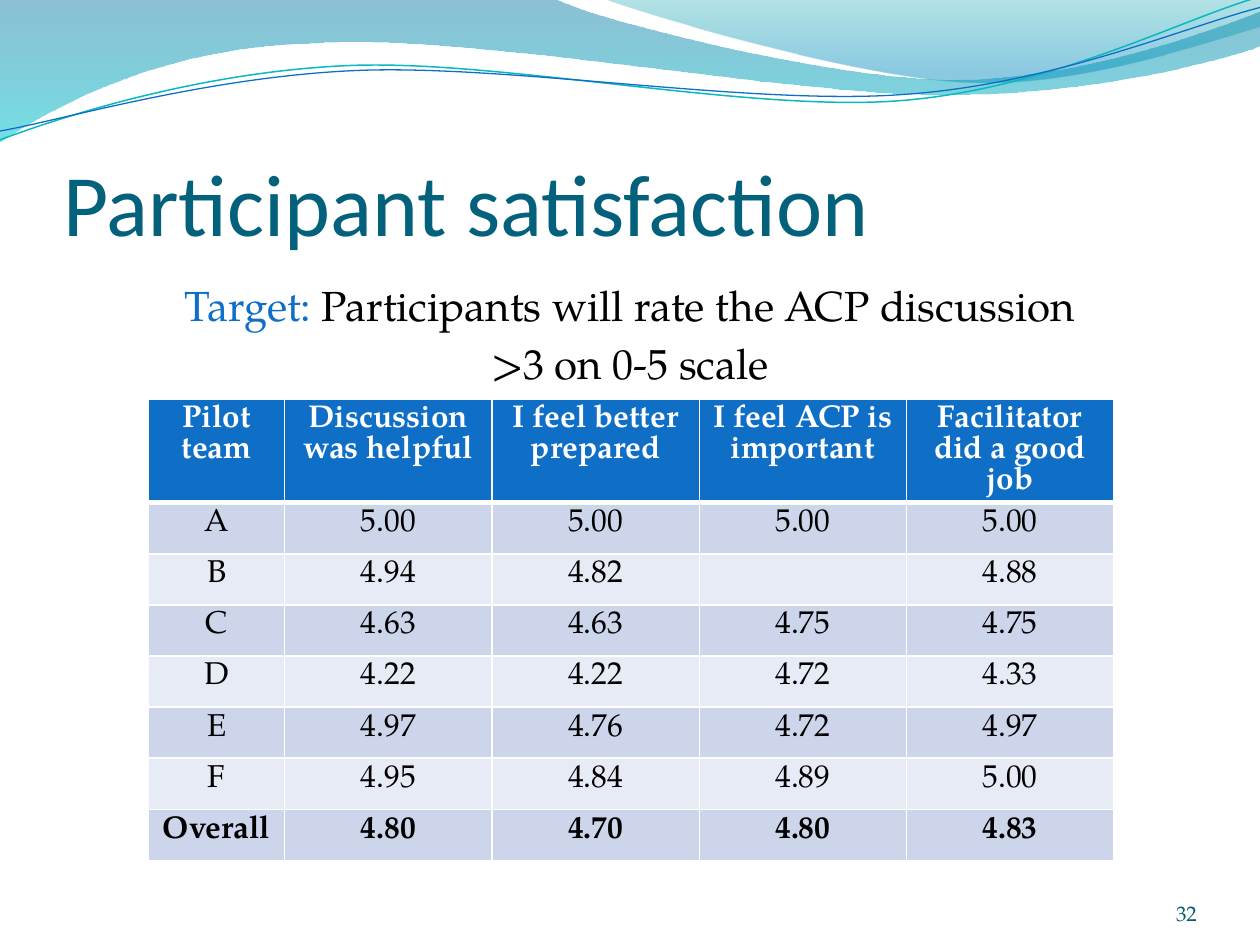
from dataclasses import dataclass
from math import cos, radians, sin
from typing import Optional

from lxml.etree import SubElement
from pptx import Presentation
from pptx.dml.color import RGBColor
from pptx.enum.text import MSO_ANCHOR as Anchor, PP_ALIGN as Align
from pptx.oxml.ns import qn
from pptx.util import Inches, Pt

SERIF, SANS = "TeX Gyre Pagella", "Calibri"
BLUE, TEAL, WHITE, BLACK = "0F6FC6", "04617B", "FFFFFF", "000000"
BANDS = ("CCD5EA", "E7EBF5")

TABLE_ROWS = [
    ["Pilot team", "Discussion was helpful", "I feel better prepared",
     "I feel ACP is important", "Facilitator did a good job"],
    ["A", "5.00", "5.00", "5.00", "5.00"],
    ["B", "4.94", "4.82", "", "4.88"],
    ["C", "4.63", "4.63", "4.75", "4.75"],
    ["D", "4.22", "4.22", "4.72", "4.33"],
    ["E", "4.97", "4.76", "4.72", "4.97"],
    ["F", "4.95", "4.84", "4.89", "5.00"],
    ["Overall", "4.80", "4.70", "4.80", "4.83"],
]


@dataclass
class GradientStop:
    position: float
    color: str
    opacity: int


@dataclass
class Wave:
    """Segments hold one point for a line and three for a Bézier curve."""
    start: tuple
    segments: list
    stops: Optional[list] = None
    line_color: str = ""
    line_width: float = 0
    center: tuple = (0, 0)
    rotation: float = 0


WAVES = [
    Wave((0, 0), [
        [(4.4, -0.01)],
        [(4.76, 0.17), (6.64, 0.63), (7.58, 0.63)],
        [(8.53, 0.63), (9.58, 0.26), (10, 0.09)],
        [(10.01, 0.36)],
        [(9.83, 0.44), (8.7, 0.76), (7.46, 0.75)],
        [(6.22, 0.75), (3.82, 0.28), (2.57, 0.34)],
        [(1.29, 0.36), (0.46, 0.83), (-0.01, 1.13)],
        [(0, 0)],
    ], stops=[GradientStop(0, "0074A1", 45), GradientStop(1, "00C6CF", 55)]),
    Wave((4.79, -0.01), [
        [(5.09, 0.11), (6.82, 0.62), (7.69, 0.65)],
        [(8.56, 0.69), (9.61, 0.32), (10, 0.21)],
        [(10, 0)],
        [(4.79, -0.01)],
    ], stops=[GradientStop(0, "00A1A9", 30), GradientStop(0.8, "008BBF", 45)]),
    Wave((0, 1.11), [
        [(0.48, 0.93), (1.58, 0.57), (2.77, 0.52)],
        [(3.95, 0.47), (5.93, 0.89), (7.13, 0.8)],
        [(8.33, 0.71), (9.38, 0.15), (9.98, -0.02)],
    ], line_color="0AB8BF", line_width=0.85, center=(4.99, 0.58), rotation=357.3),
    Wave((0, 1.04), [
        [(0.47, 0.96), (1.64, 0.61), (2.83, 0.56)],
        [(4.03, 0.51), (5.97, 0.84), (7.17, 0.75)],
        [(8.36, 0.67), (9.41, 0.21), (10, 0.06)],
    ], line_color=BLUE, line_width=0.75, center=(5, 0.59), rotation=357.3),
]


def rgb(color: str) -> RGBColor:
    return RGBColor.from_string(color)


def unrotated(wave: Wave, point: tuple) -> tuple:
    """Place a point so that the shape's rotation brings it to its final spot."""
    angle = radians(-wave.rotation)
    x, y = point[0] - wave.center[0], point[1] - wave.center[1]
    return (Inches(wave.center[0] + x * cos(angle) - y * sin(angle)),
            Inches(wave.center[1] + x * sin(angle) + y * cos(angle)))


def curve_segments(shape, segments: list) -> None:
    """Join each run of three straight steps into one Bézier curve."""
    steps = iter(list(shape.element.spPr.iter(qn("a:lnTo"))))
    for segment in segments:
        first, *others = [next(steps) for _ in segment]
        if others:
            first.tag = qn("a:cubicBezTo")
        for step in others:
            first.append(step[0])
            step.getparent().remove(step)


def draw_wave(slide, wave: Wave) -> None:
    points = [unrotated(wave, point) for segment in wave.segments for point in segment]
    builder = slide.shapes.build_freeform(*unrotated(wave, wave.start))
    builder.add_line_segments(points, close=bool(wave.stops))
    shape = builder.convert_to_shape()
    curve_segments(shape, wave.segments)
    shape.rotation = wave.rotation
    shape.shadow.inherit = False
    if not wave.stops:
        shape.fill.background()
        shape.line.color.rgb = rgb(wave.line_color)
        shape.line.width = Pt(wave.line_width)
        return
    shape.line.fill.background()
    shape.fill.gradient()
    shape.fill.gradient_angle = 270
    for target, stop in zip(shape.fill.gradient_stops, wave.stops):
        target.color.rgb = rgb(stop.color)
        target.position = stop.position
    # Opacity of each gradient stop
    colors = list(shape.element.spPr.iter(qn("a:srgbClr")))
    for color, stop in zip(colors, wave.stops):
        SubElement(color, qn("a:alpha"), val=str(stop.opacity * 1000))


def add_text(paragraph, text: str, *, size: float, color: str, font: str = SERIF,
             bold: bool = False, align=Align.CENTER) -> None:
    paragraph.alignment = align
    run = paragraph.add_run()
    run.text = text
    run.font.name = font
    run.font.size = Pt(size)
    run.font.bold = bold
    run.font.color.rgb = rgb(color)


def set_frame(frame, *, vertical_inset: float = 0, anchor=Anchor.TOP) -> None:
    frame.word_wrap = True
    frame.vertical_anchor = anchor
    frame.margin_left = frame.margin_right = 0
    frame.margin_top = frame.margin_bottom = Inches(vertical_inset)


def set_borders(cell, *, top: float, bottom: float) -> None:
    properties = cell._tc.get_or_add_tcPr()
    for side, width in (("L", 1), ("R", 1), ("T", top), ("B", bottom)):
        line = SubElement(properties, qn(f"a:ln{side}"), w=str(Pt(width)))
        fill = SubElement(line, qn("a:solidFill"))
        SubElement(fill, qn("a:srgbClr"), val=WHITE)


def draw_table(slide) -> None:
    width, height = 7.66, 3.66
    first_width, header_height = 1.08, 0.82
    row_count, column_count = len(TABLE_ROWS), len(TABLE_ROWS[0])
    body_width = (width - first_width) / (column_count - 1)
    body_height = (height - header_height) / (row_count - 1)
    table = slide.shapes.add_table(row_count, column_count, Inches(1.18), Inches(3.17),
                                   Inches(width), Inches(height)).table
    for index, column in enumerate(table.columns):
        column.width = Inches(body_width if index else first_width)
    for index, (row, values) in enumerate(zip(table.rows, TABLE_ROWS)):
        is_header, is_total = index == 0, index == row_count - 1
        row.height = Inches(header_height if is_header else body_height)
        for cell, value in zip(row.cells, values):
            set_borders(cell, top=3 if index == 1 else 1, bottom=3 if is_header else 1)
            cell.fill.solid()
            cell.fill.fore_color.rgb = rgb(BLUE if is_header else BANDS[(index - 1) % 2])
            if is_header:
                cell.margin_top, cell.margin_bottom = Inches(0.04), Inches(0.03)
            if value:
                paragraph = cell.text_frame.paragraphs[0]
                paragraph.line_spacing = Pt(17.7 if is_header else 18)
                add_text(paragraph, value, size=18, bold=is_header or is_total,
                         color=WHITE if is_header else BLACK)


def main() -> None:
    presentation = Presentation()
    presentation.slide_width, presentation.slide_height = Inches(10), Inches(7.5)
    slide = presentation.slides.add_slide(presentation.slide_layouts[5])

    # Waves along the top
    for wave in WAVES:
        draw_wave(slide, wave)

    # Title
    title = slide.shapes.title
    title.left, title.top, title.width, title.height = map(Inches, (0.5, 0.77, 9.08, 1.25))
    set_frame(title.text_frame, anchor=Anchor.BOTTOM)
    add_text(title.text_frame.paragraphs[0], "Participant satisfaction",
             size=50, color=TEAL, font=SANS, align=Align.LEFT)

    # Target statement
    target = slide.shapes.add_textbox(Inches(1.25), Inches(2.17), Inches(7.5), Inches(1.58))
    set_frame(target.text_frame, vertical_inset=0.05)
    first, second = target.text_frame.paragraphs[0], target.text_frame.add_paragraph()
    first.space_before = second.space_before = Pt(4.3)
    add_text(first, "Target:", size=24, color=BLUE)
    add_text(first, " Participants will rate the ACP discussion", size=24, color=BLACK)
    add_text(second, ">3 on 0-5 scale", size=24, color=BLACK)

    # Ratings by pilot team
    draw_table(slide)

    # Slide number
    number = slide.shapes.add_textbox(Inches(8.67), Inches(6.95), Inches(0.83), Inches(0.4))
    set_frame(number.text_frame, anchor=Anchor.BOTTOM)
    add_text(number.text_frame.paragraphs[0], "32", size=12, color="045D75", align=Align.RIGHT)

    presentation.save("out.pptx")


if __name__ == "__main__":
    main()
